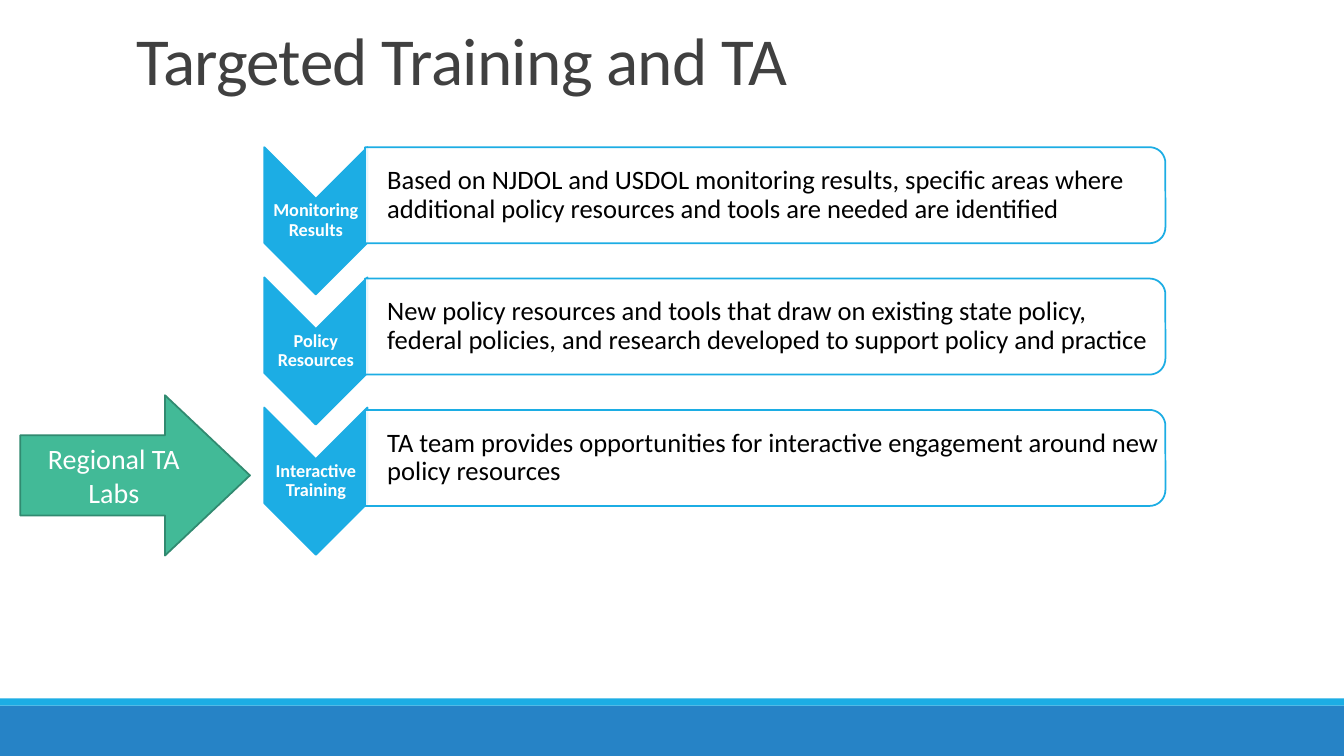
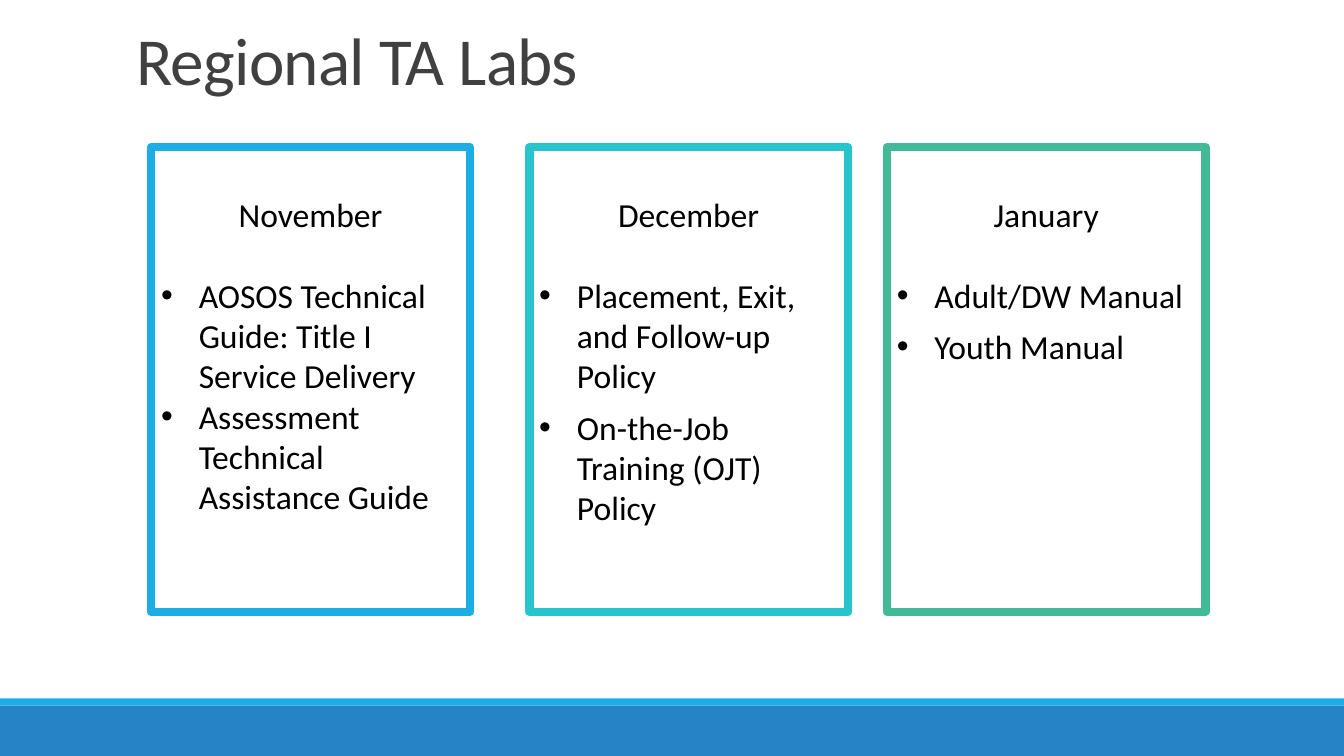
from math import cos, sin, radians

from pptx import Presentation
from pptx.dml.color import RGBColor
from pptx.enum.shapes import MSO_SHAPE as Geo
from pptx.enum.text import MSO_ANCHOR as Anchor, MSO_AUTO_SIZE as Fit, PP_ALIGN as Align
from pptx.oxml.ns import qn
from pptx.util import Cm, Pt
from lxml.etree import SubElement as Sub

WIDE, HIGH = 33.87, 19.05
FONT = "Calibri"
BLUE, DEEP, TEAL, GREEN, PINE = "1CADE4", "2683C6", "28C4CC", "42BA97", "318A70"
WHITE, BLACK, GREY = "FFFFFF", "000000", "404040"

TOP = 3.71

STEPS = [
    ("Monitoring Results",
     "Based on NJDOL and USDOL monitoring results, specific areas where "
     "additional policy resources and tools are needed are identified"),
    ("Policy Resources",
     "New policy resources and tools that draw on existing state policy, "
     "federal policies, and research developed to support policy and practice"),
    ("Interactive Training",
     "TA team provides opportunities for interactive engagement around new "
     "policy resources"),
]

LABS = [
    (3.81, BLUE, 0, "November",
     ["AOSOS Technical Guide: Title I Service Delivery",
      "Assessment Technical Assistance Guide"]),
    (13.34, TEAL, 8, "December",
     ["Placement, Exit, and Follow-up Policy", "On-the-Job Training (OJT) Policy"]),
    (22.35, GREEN, 8, "January", ["Adult/DW Manual", "Youth Manual"]),
]


def color(code):
    return RGBColor.from_string(code)


class Deck:
    def __init__(self):
        self.prs = Presentation()
        self.prs.slide_width, self.prs.slide_height = Cm(WIDE), Cm(HIGH)
        self.slide = None

    def start(self, title):
        """Add a slide with the shared bands and title."""
        self.slide = self.prs.slides.add_slide(self.prs.slide_layouts[5])
        self.block(Geo.RECTANGLE, 0, 17.78, WIDE, 1.27, DEEP)
        self.block(Geo.RECTANGLE, 0, 17.6, WIDE, 0.18, BLUE)
        head = self.slide.shapes.title
        head.left, head.top, head.width, head.height = Cm(3.18), Cm(0.64), Cm(29), Cm(2.5)
        frame = head.text_frame
        frame.text = title
        frame.auto_size = Fit.NONE
        frame.vertical_anchor = Anchor.TOP
        para = frame.paragraphs[0]
        self.style(para, 48, GREY, Align.LEFT, 0.85)
        para.runs[0]._r.get_or_add_rPr().set("spc", "-50")

    def style(self, para, size, ink, align=Align.LEFT, space=None, bold=False):
        para.alignment = align
        para.line_spacing = space
        for run in para.runs:
            font = run.font
            font.name, font.size, font.bold = FONT, Pt(size), bold
            font.color.rgb = color(ink)

    def paint(self, shape, fill, line=None, width=1.25):
        shape.shadow.inherit = False
        if fill:
            shape.fill.solid()
            shape.fill.fore_color.rgb = color(fill)
        else:
            shape.fill.background()
        if line:
            shape.line.color.rgb = color(line)
            shape.line.width = Pt(width)
        else:
            shape.line.fill.background()

    def block(self, geo, x, y, w, h, fill, line=None, width=1.25):
        shape = self.slide.shapes.add_shape(geo, Cm(x), Cm(y), Cm(w), Cm(h))
        self.paint(shape, fill, line, width)
        return shape

    def outline(self, points, fill):
        """Draw a closed blue-edged polygon through points given in cm."""
        spots = [(Cm(x), Cm(y)) for x, y in points]
        pen = self.slide.shapes.build_freeform(*spots[0])
        pen.add_line_segments(spots[1:], close=True)
        shape = pen.convert_to_shape()
        self.paint(shape, fill, BLUE)
        return shape

    def label(self, shape, text, pads, *look):
        """Write one centred-high paragraph; pads are left, top, right, bottom."""
        frame = shape.text_frame
        frame.text = text
        frame.word_wrap = True
        frame.vertical_anchor = Anchor.MIDDLE
        (frame.margin_left, frame.margin_top,
         frame.margin_right, frame.margin_bottom) = map(Cm, pads)
        self.style(frame.paragraphs[0], *look)

    def chevron(self, x, y, text):
        w, h, dip = 2.6, 3.71, 1.3
        mid, low = x + w / 2, y + h
        shape = self.outline([(x, y), (mid, y + dip), (x + w, y), (x + w, low - dip),
                              (mid, low), (x, low - dip)], BLUE)
        self.label(shape, text, (0.03, 1.3, 0.03, 1.3), 13, WHITE, Align.CENTER, 0.9, True)

    def card(self, x, y, text):
        """Draw a text card whose right corners are rounded."""
        w, h, rad = 20.17, 2.42, 0.4
        right, low = x + w - rad, y + h - rad
        turn = [(right + rad * cos(radians(a)),
                 (y + rad if a < 0 else low) + rad * sin(radians(a)))
                for a in [*range(-90, 0, 10), -0.01, *range(0, 91, 10)]]
        shape = self.outline([(x, y), *turn, (x, y + h)], WHITE)
        tint = shape.fill._xPr.find(qn("a:solidFill"))[0]
        Sub(tint, qn("a:alpha"), val="90000")
        self.label(shape, text, (0.56, 0.15, 0.15, 0.15), 19, BLACK, Align.LEFT, 0.9)

    def arrow(self, x, y, w, h, text):
        shape = self.block(Geo.RIGHT_ARROW, x, y, w, h, GREEN, PINE)
        shape.adjustments[0], shape.adjustments[1] = 0.5, 0.53
        self.label(shape, text, (0, 0, 0, 0), 20, WHITE, Align.CENTER)

    def panel(self, x, edge, gap, month, items):
        shape = self.block(Geo.RECTANGLE, x, TOP, 8.03, 11.71, None, edge, 6)
        frame = shape.text_frame
        frame.word_wrap = True
        frame.vertical_anchor = Anchor.TOP
        frame.margin_top = Cm(1.17)
        frame.text = month
        head = frame.paragraphs[0]
        self.style(head, 24, BLACK, Align.CENTER)
        head.space_after = Pt(29)
        for item in items:
            para = frame.add_paragraph()
            para.text = item
            self.bullet(para)
            self.style(para, 24, BLACK)
            para.space_after = Pt(gap)

    def bullet(self, para):
        props = para._p.get_or_add_pPr()
        props.set("marL", str(Cm(0.95)))
        props.set("indent", str(-Cm(0.95)))
        Sub(props, qn("a:buFont"), typeface="Arial")
        Sub(props, qn("a:buChar"), char="•")


def main():
    deck = Deck()
    deck.start("Targeted Training and TA")
    for row, (name, text) in enumerate(STEPS):
        deck.chevron(6.66, TOP + row * 3.28, name)
        deck.card(9.2, TOP + row * 3.31, text)
    deck.arrow(0.51, 9.96, 5.79, 4.04, "Regional TA Labs")

    deck.start("Regional TA Labs")
    for lab in LABS:
        deck.panel(*lab)
    deck.prs.save("out.pptx")


if __name__ == "__main__":
    main()
